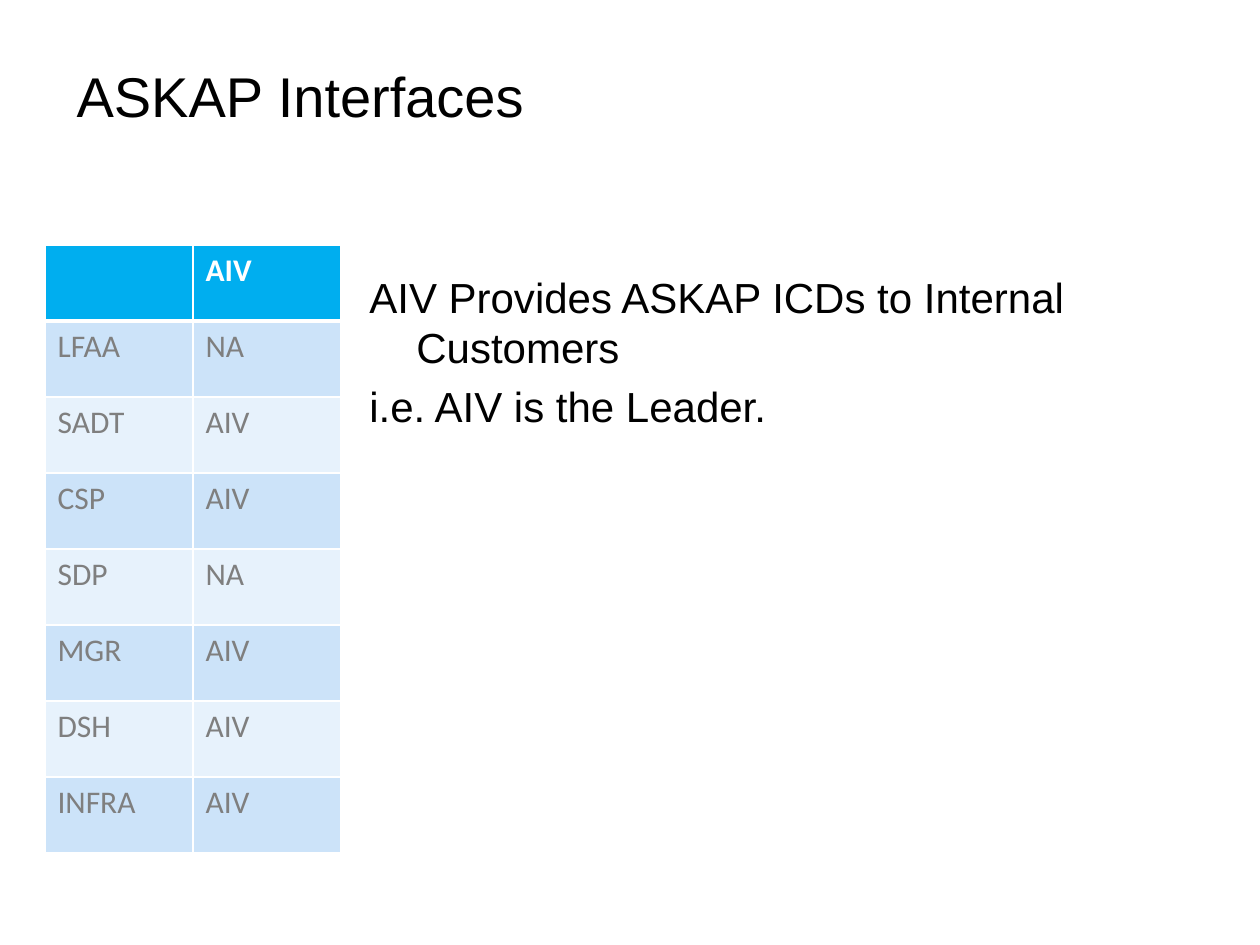
"""Build the ASKAP Interfaces slide: a title, an interface table and a statement."""
from dataclasses import dataclass

from lxml.etree import SubElement
from pptx import Presentation
from pptx.dml.color import RGBColor as RGB
from pptx.enum.text import MSO_ANCHOR as ANCHOR, PP_ALIGN as ALIGN
from pptx.oxml.ns import qn
from pptx.util import Emu, Pt


@dataclass(frozen=True)
class Theme:
    text: str = "000000"
    white: str = "FFFFFF"
    muted: str = "7F7F7F"
    header: str = "00AEEF"
    bands: tuple = ("CCE3F9", "E7F2FC")
    font: str = "Arial"
    table_font: str = "Calibri"
    title_size: int = 32
    body_size: int = 24
    table_size: int = 18


THEME = Theme()
SCALE = 914400 / 126


def px(*lengths):
    return [Emu(round(n * SCALE)) for n in lengths]


def style(p, name, size, color, bold=False):
    for r in p.runs:
        r.font.name, r.font.size, r.font.bold = name, Pt(size), bold
        r.font.color.rgb = RGB.from_string(color)


prs = Presentation()
prs.slide_width, prs.slide_height = px(1260, 945)
s = prs.slides.add_slide(prs.slide_layouts[5])

title = s.shapes.title
title.left, title.top, title.width, title.height = px(64, 26, 1134, 139)
tf = title.text_frame
tf.text = "ASKAP Interfaces"
tf.vertical_anchor = ANCHOR.MIDDLE
tf.paragraphs[0].alignment = ALIGN.LEFT
style(tf.paragraphs[0], THEME.font, THEME.title_size, THEME.text)

tf = s.shapes.add_textbox(*px(357, 265, 903, 615)).text_frame
tf.word_wrap = True
hang = px(47)[0]
for i, line in enumerate(("AIV Provides ASKAP ICDs to Internal Customers", "i.e. AIV is the Leader.")):
    p = tf.add_paragraph() if i else tf.paragraphs[0]
    p.text = line
    pPr = p._p.get_or_add_pPr()
    pPr.set("marL", str(hang))
    pPr.set("indent", str(-hang))
    if i:
        p.space_before = Pt(4.8)
    style(p, THEME.font, THEME.body_size, THEME.text)

rows = [("", "AIV"), ("LFAA", "NA"), ("SADT", "AIV"), ("CSP", "AIV"),
        ("SDP", "NA"), ("MGR", "AIV"), ("DSH", "AIV"), ("INFRA", "AIV")]
table = s.shapes.add_table(len(rows), 2, *px(45, 245, 296, 608)).table
for i, row in enumerate(rows):
    fill = THEME.bands[(i - 1) % 2] if i else THEME.header
    color = THEME.muted if i else THEME.white
    widths = {"lnL": 1, "lnR": 1, "lnT": 3 if i == 1 else 1, "lnB": 1 if i else 3}
    for j, label in enumerate(row):
        cell = table.cell(i, j)
        cell.text = label
        p = cell.text_frame.paragraphs[0]
        p.font.size = Pt(THEME.table_size)
        style(p, THEME.table_font, THEME.table_size, color, bold=i == 0)
        tcPr = cell._tc.get_or_add_tcPr()
        for side, width in widths.items():
            ln = SubElement(tcPr, qn(f"a:{side}"), w=str(Pt(width)))
            SubElement(SubElement(ln, qn("a:solidFill")), qn("a:srgbClr"), val=THEME.white)
        cell.fill.solid()
        cell.fill.fore_color.rgb = RGB.from_string(fill)
        fill_xml = tcPr.find(qn("a:solidFill"))
        tcPr.remove(fill_xml)
        tcPr.append(fill_xml)

prs.save("out.pptx")
